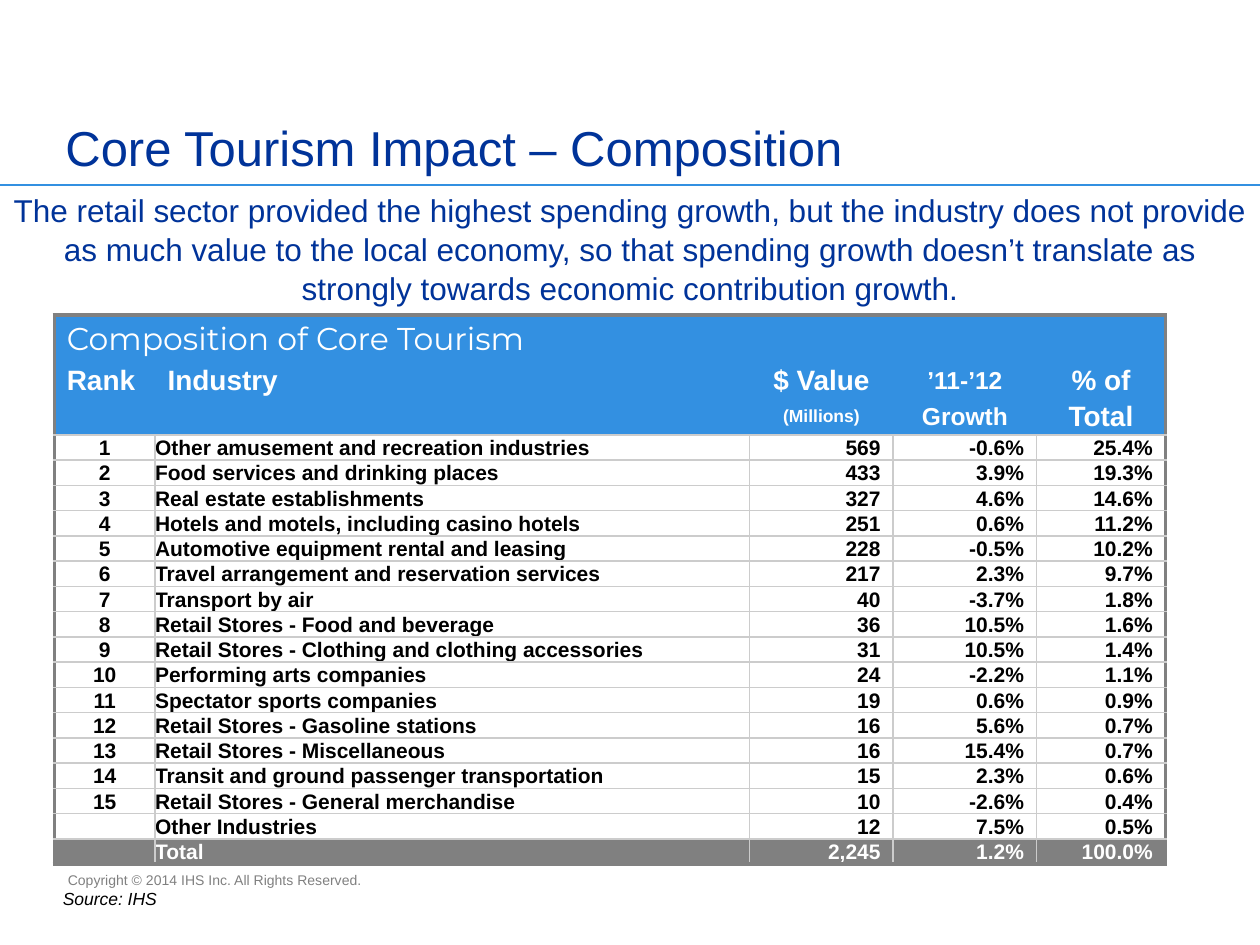
from dataclasses import dataclass

from lxml import etree
from pptx import Presentation
from pptx import util as u
from pptx.dml.color import RGBColor
from pptx.enum import shapes, text
from pptx.oxml import ns

Pt = u.Pt
LEFT, CENTER, RIGHT = text.PP_ALIGN.LEFT, text.PP_ALIGN.CENTER, text.PP_ALIGN.RIGHT
MIDDLE, BOTTOM = text.MSO_ANCHOR.MIDDLE, text.MSO_ANCHOR.BOTTOM


@dataclass(frozen=True)
class Theme:
    font: str = "Arial"
    caption_font: str = "Montserrat"
    navy: str = "003399"
    blue: str = "3390E1"
    gray: str = "808080"
    grid: str = "CCCCCC"
    white: str = "FFFFFF"
    black: str = "000000"
    title: float = 28
    lead: float = 18
    heading: float = 16
    small_heading: float = 14
    unit: float = 10
    body: float = 12
    source: float = 10
    copyright: float = 8
    frame_width: float = 2.25
    grid_width: float = 1


THEME = Theme()

COLUMN_WIDTHS = [57.6, 339.8, 82, 82, 73.6]
CAPTION_HEIGHT, HEADING_HEIGHT, ROW_HEIGHT = 27.3, 19.6, 14.25
CAPTION = "Composition of Core Tourism"
# Each heading: wording, type size, alignment
HEADINGS = [
    [("Rank", THEME.heading, LEFT), ("Industry", THEME.heading, LEFT),
     ("$ Value", THEME.heading, CENTER), ("’11-’12", THEME.small_heading, CENTER),
     ("% of", THEME.heading, CENTER)],
    [("", THEME.unit, LEFT), ("", THEME.unit, LEFT),
     ("(Millions)", THEME.unit, CENTER), ("Growth", THEME.small_heading, CENTER),
     ("Total", THEME.heading, CENTER)],
]
# Industries in rank order: name, value, growth, share
INDUSTRIES = [
    ("Other amusement and recreation industries", "569", "-0.6%", "25.4%"),
    ("Food services and drinking places", "433", "3.9%", "19.3%"),
    ("Real estate establishments", "327", "4.6%", "14.6%"),
    ("Hotels and motels, including casino hotels", "251", "0.6%", "11.2%"),
    ("Automotive equipment rental and leasing", "228", "-0.5%", "10.2%"),
    ("Travel arrangement and reservation services", "217", "2.3%", "9.7%"),
    ("Transport by air", "40", "-3.7%", "1.8%"),
    ("Retail Stores - Food and beverage", "36", "10.5%", "1.6%"),
    ("Retail Stores - Clothing and clothing accessories", "31", "10.5%", "1.4%"),
    ("Performing arts companies", "24", "-2.2%", "1.1%"),
    ("Spectator sports companies", "19", "0.6%", "0.9%"),
    ("Retail Stores - Gasoline stations", "16", "5.6%", "0.7%"),
    ("Retail Stores - Miscellaneous", "16", "15.4%", "0.7%"),
    ("Transit and ground passenger transportation", "15", "2.3%", "0.6%"),
    ("Retail Stores - General merchandise", "10", "-2.6%", "0.4%"),
]
OTHERS = ("", "Other Industries", "12", "7.5%", "0.5%")
TOTAL = ("", "Total", "2,245", "1.2%", "100.0%")


def write(frame, words, size, color, align=LEFT, font=THEME.font, bold=False, italic=False):
    """Fill the first paragraph of a text frame."""
    para = frame.paragraphs[0]
    para.alignment = align
    para.font.name, para.font.size = font, Pt(size)
    para.font.bold, para.font.italic = bold, italic
    para.font.color.rgb = RGBColor.from_string(color)
    if words:
        para.add_run().text = words
    else:  # keeps an empty cell as low as its row
        etree.SubElement(para._p, ns.qn("a:endParaRPr"), sz=str(size * 100))


def add_text(page, box, words, size, color, anchor=text.MSO_ANCHOR.TOP, wrap=True, **style):
    frame = page.shapes.add_textbox(*map(Pt, box)).text_frame
    frame.word_wrap = wrap
    frame.vertical_anchor = anchor
    write(frame, words, size, color, **style)
    return frame


def set_border(cell, side, color, width):
    """Draw one side of a cell, or clear it when there is no colour."""
    line = etree.SubElement(cell._tc.get_or_add_tcPr(), ns.qn("a:ln" + side), w=str(Pt(width)))
    if color is None:
        etree.SubElement(line, ns.qn("a:noFill"))
    else:
        fill = etree.SubElement(line, ns.qn("a:solidFill"))
        etree.SubElement(fill, ns.qn("a:srgbClr"), val=color)


def style_cell(cell, fill, margins, anchor, framed, ruled):
    """Sides in framed get the outer frame, those in ruled the thin grid."""
    for side in "LRTB":
        if side in framed:
            set_border(cell, side, THEME.gray, THEME.frame_width)
        else:
            set_border(cell, side, THEME.grid if side in ruled else None, THEME.grid_width)
    cell.fill.solid()
    cell.fill.fore_color.rgb = RGBColor.from_string(fill)
    cell.margin_left, cell.margin_top, cell.margin_right, cell.margin_bottom = map(Pt, margins)
    cell.vertical_anchor = anchor


def add_header(page, box):
    """Title with the rule below it."""
    left, top, width, height = box
    title = page.shapes.title
    title.left, title.top, title.width, title.height = map(Pt, box)
    frame = title.text_frame
    frame.auto_size = text.MSO_AUTO_SIZE.NONE
    frame.vertical_anchor = BOTTOM
    write(frame, "Core Tourism Impact – Composition", THEME.title, THEME.navy)

    rule_top = Pt(top + height + 1.5)
    rule = page.shapes.add_connector(
        shapes.MSO_CONNECTOR.STRAIGHT, 0, rule_top, Pt(720), rule_top)
    rule.line.color.rgb = RGBColor.from_string(THEME.blue)
    rule.line.width = Pt(1)
    etree.SubElement(rule._element.spPr, ns.qn("a:effectLst"))


def add_lead(page, box):
    """Centred message above the table."""
    frame = add_text(
        page, box,
        "The retail sector provided the highest spending growth, but the industry does not "
        "provide as much value to the local economy, so that spending growth doesn’t "
        "translate as strongly towards economic contribution growth.",
        THEME.lead, THEME.navy, MIDDLE, align=CENTER)
    frame.paragraphs[0].line_spacing = 1.04


def add_composition_table(page, box):
    ranked = [(str(rank), *row) for rank, row in enumerate(INDUSTRIES, 1)]
    rows = ranked + [OTHERS, TOTAL]
    first = 1 + len(HEADINGS)
    last_column, last_row = len(COLUMN_WIDTHS) - 1, first + len(rows) - 1
    table = page.shapes.add_table(last_row + 1, last_column + 1, *map(Pt, box)).table
    table.first_row = table.horz_banding = False
    for column, width in zip(table.columns, COLUMN_WIDTHS):
        column.width = Pt(width)
    heights = [CAPTION_HEIGHT] + [HEADING_HEIGHT] * len(HEADINGS) + [ROW_HEIGHT] * len(rows)
    for row, height in zip(table.rows, heights):
        row.height = Pt(height)

    # Fills, margins and borders
    for r in range(last_row + 1):
        for c in range(last_column + 1):
            framed = (("L" if c == 0 else "") + ("R" if c == last_column or r == 0 else "")
                      + ("T" if r == 0 else "") + ("B" if r == last_row else ""))
            if r < first:
                ruled = "B" if r == first - 1 else ""
                style_cell(table.cell(r, c), THEME.blue, (7.2, 0.7, 7.2, 0.7),
                           MIDDLE, framed, ruled)
            else:
                fill = THEME.gray if r == last_row else THEME.white
                style_cell(table.cell(r, c), fill, (0, 0, 7.2 if c > 1 else 0, 0),
                           BOTTOM, framed, "LRTB")

    # Caption and headings
    caption = table.cell(0, 0)
    caption.merge(table.cell(0, last_column))
    write(caption.text_frame, CAPTION, THEME.lead, THEME.white, font=THEME.caption_font)
    for r, headings in enumerate(HEADINGS, 1):
        for c, (words, size, align) in enumerate(headings):
            write(table.cell(r, c).text_frame, words, size, THEME.white, align, bold=True)

    # Industries and total
    aligns = [CENTER, LEFT, RIGHT, RIGHT, RIGHT]
    for r, row in enumerate(rows, first):
        color = THEME.white if r == last_row else THEME.black
        for c, (words, align) in enumerate(zip(row, aligns)):
            write(table.cell(r, c).text_frame, words, THEME.body, color, align, bold=True)


def add_footer(page, box):
    """Copyright line with the source below it."""
    left, top, width, height = box
    add_text(page, (left + 2.9, top, width, 16.6),
             "Copyright © 2014 IHS Inc. All Rights Reserved.", THEME.copyright, THEME.gray)
    add_text(page, (left, top + 9.4, 74, 19.4), "Source: IHS",
             THEME.source, THEME.black, wrap=False, italic=True)


def main():
    deck = Presentation()
    deck.slide_width, deck.slide_height = Pt(720), Pt(540)
    page = deck.slides.add_slide(deck.slide_layouts[5])
    add_header(page, (30.2, 15.1, 592.6, 89.3))
    add_lead(page, (0, 108.7, 720, 66.2))
    add_composition_table(page, (31, 180, 635, 308.75))
    add_footer(page, (28.8, 494.6, 257, 28.8))
    deck.save("out.pptx")


if __name__ == "__main__":
    main()
